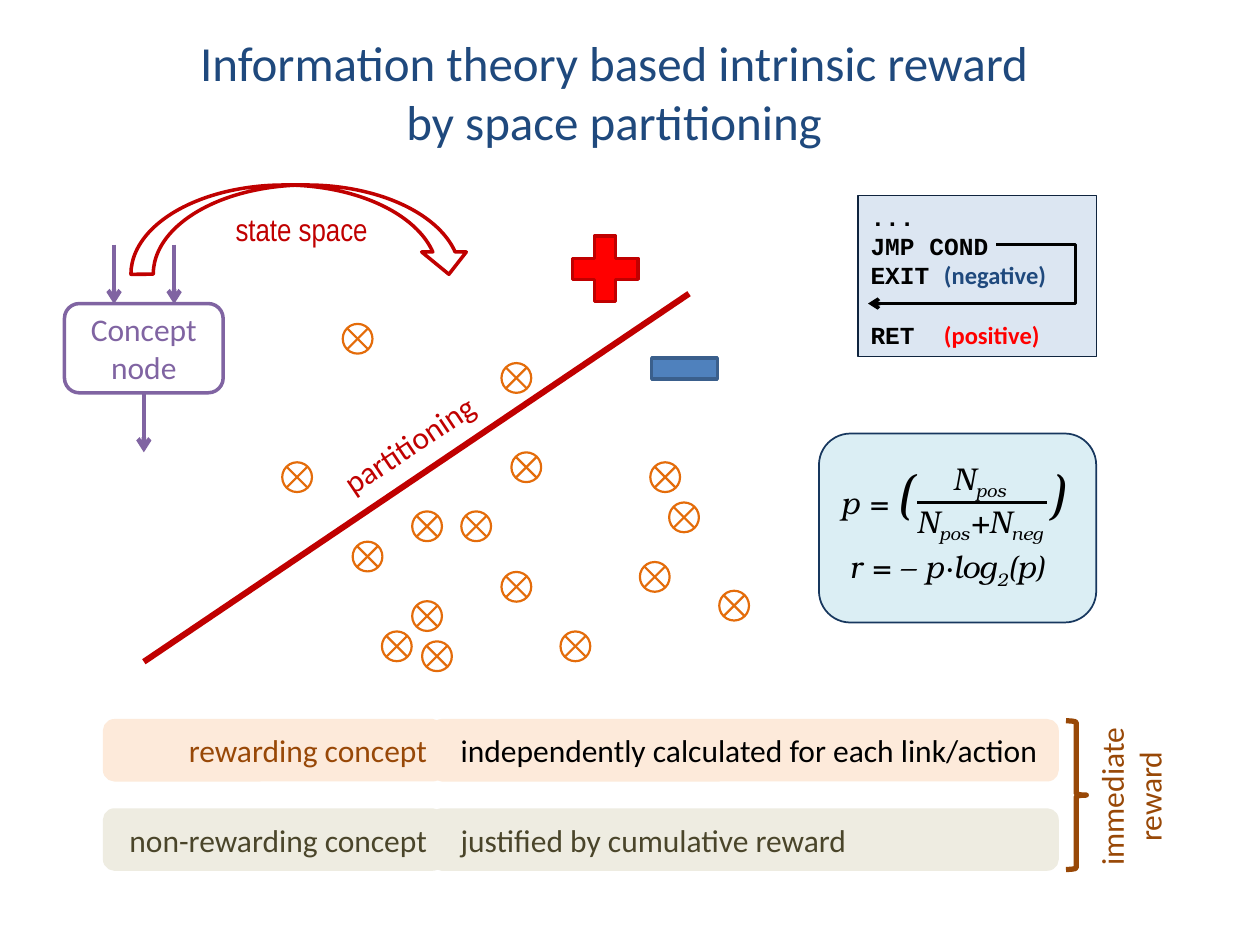
"""Slide on intrinsic reward from partitioning a state space."""
from dataclasses import dataclass

from lxml import etree
from pptx import Presentation
from pptx import util as u
from pptx.dml.color import RGBColor
from pptx.enum import shapes, text
from pptx.oxml import ns

G = shapes.MSO_SHAPE
AL = text.PP_ALIGN
AN = text.MSO_ANCHOR


@dataclass(frozen=True)
class Theme:
    navy: str = "1F497D"
    red: str = "C00000"
    bright: str = "FF0000"
    purple: str = "8064A2"
    orange: str = "E46C0A"
    brown: str = "984807"
    olive: str = "4A452A"
    peach: str = "FDEADA"
    sand: str = "EEECE1"
    black: str = "000000"
    white: str = "FFFFFF"
    title: int = 28
    body: int = 18
    code: int = 14
    paren: int = 32
    sans: str = "Calibri"
    narrow: str = "Arial Narrow"
    mono: str = "Courier New"
    math: str = "TeX Gyre Bonum"


def sub(parent, tag, **attrs):
    return etree.SubElement(parent, ns.qn(tag), attrs)


class Painter:
    def __init__(self, slide, theme):
        self.s, self.t = slide, theme

    def put_text(self, sp, paras, align=AL.LEFT, anchor=AN.TOP, wrap=True, inset=0.25,
                 color=None, size=None, font=None, before=(), tab=None, **style):
        tf = sp.text_frame
        frame = dict(word_wrap=wrap, vertical_anchor=anchor, margin_left=u.Cm(inset))
        for name, value in frame.items():
            setattr(tf, name, value)
        base = dict(color=color or self.t.black, size=size or self.t.body,
                    name=font or self.t.sans, **style)
        for i, runs in enumerate(paras):
            p = tf.paragraphs[0] if i == 0 else tf.add_paragraph()
            p.alignment = align
            if i in before:
                p.space_before = u.Pt(17)
            if tab:
                tabs = sub(p._p.get_or_add_pPr(), "a:tabLst")
                sub(tabs, "a:tab", pos=str(u.Cm(tab)), algn="l")
            for run in [runs] if isinstance(runs, str) else runs:
                words, extra = (run, {}) if isinstance(run, str) else run
                self.put_run(p, words, {**base, **extra})

    def put_run(self, p, words, fmt):
        r = p.add_run()
        r.text = words
        if fmt.pop("low", False):
            r._r.get_or_add_rPr().set("baseline", "-25000")
        r.font.color.rgb = RGBColor.from_string(fmt.pop("color"))
        fmt["size"] = u.Pt(fmt["size"])
        for name, value in fmt.items():
            setattr(r.font, name, value)

    def shape(self, kind, x, y, w, h, line, width, fill=None):
        sp = self.s.shapes.add_shape(kind, *map(u.Cm, (x, y, w, h)))
        sp.shadow.inherit = False
        if fill:
            sp.fill.solid()
            sp.fill.fore_color.rgb = RGBColor.from_string(fill)
        else:
            sp.fill.background()
        sp.line.color.rgb = RGBColor.from_string(line)
        sp.line.width = u.Pt(width)
        return sp

    def label(self, paras, x, y, w, h, rotation=0, **fmt):
        sp = self.s.shapes.add_textbox(*map(u.Cm, (x, y, w, h)))
        sp.rotation = rotation
        self.put_text(sp, paras, **fmt)

    def bar(self, words, x, y, w, fill, **fmt):
        sp = self.shape(G.ROUNDED_RECTANGLE, x, y, w, 1.19, fill, 2, fill)
        self.put_text(sp, [words], anchor=AN.MIDDLE, **fmt)

    def line(self, start, end, color, width, arrow=False, bend=None):
        kinds = shapes.MSO_CONNECTOR
        kind = kinds.STRAIGHT if bend is None else kinds.ELBOW
        c = self.s.shapes.add_connector(kind, *map(u.Cm, (*start, *end)))
        c.line.color.rgb = RGBColor.from_string(color)
        c.line.width = u.Pt(width)
        props = c._element.spPr
        if arrow:
            sub(props.find(ns.qn("a:ln")), "a:tailEnd", type="arrow")
        if bend is not None:
            guides = props.find(f"{ns.qn('a:prstGeom')}/{ns.qn('a:avLst')}")
            sub(guides, "a:gd", name="adj1", fmla=f"val {bend}")
        sub(props, "a:effectLst")


def draw_space(d, t):
    d.line((2.9, 13.34), (13.89, 5.92), t.red, 3.5)
    d.label(["partitioning"], 6.48, 8.43, 3.56, 1.02, rotation=326.2, color=t.red)
    d.shape(G.CURVED_DOWN_ARROW, 2.64, 3.73, 6.86, 1.8, t.red, 2)
    d.label(["state space"], 4.5, 4.11, 3.2, 1.02, wrap=False, color=t.red, font=t.narrow)
    states = [(5.69, 9.32), (10.11, 7.32), (8.31, 10.31), (10.31, 9.12),
              (8.51, 12.93), (7.7, 12.73), (13.11, 9.32), (10.11, 11.53),
              (14.5, 11.91), (12.9, 11.33), (11.3, 12.73), (7.11, 10.92),
              (9.3, 10.31), (8.31, 12.12), (6.91, 6.53), (13.49, 10.13)]
    for x, y in states:
        d.shape(G.FLOWCHART_SUMMING_JUNCTION, x, y, 0.6, 0.6, t.orange, 1.25, t.white)
    d.shape(G.MATH_PLUS, 11.3, 4.52, 1.8, 1.8, t.red, 2, t.bright)
    d.shape(G.MATH_MINUS, 12.9, 6.53, 1.8, 1.8, "3A5F8C", 2, "4F81BD")


def draw_node(d, t):
    for x, top in ((2.9, 7.92), (3.51, 4.93), (2.3, 4.93)):
        d.line((x, top), (x, top + 1.2), t.purple, 2.5, arrow=True)
    node = d.shape(G.ROUNDED_RECTANGLE, 1.3, 6.12, 3.2, 1.8, t.purple, 2, t.white)
    d.put_text(node, ["Concept node"], align=AL.CENTER, anchor=AN.MIDDLE, color=t.purple)


def draw_code(d, t):
    box = d.shape(G.RECTANGLE, 17.3, 3.94, 4.8, 3.25, "0F243E", 0.75, "DCE6F2")
    negative = ("(negative)", dict(name=t.sans, color=t.navy))
    positive = ("(positive)", dict(name=t.sans, color=t.bright))
    d.put_text(box, ["...", "JMP COND", ["EXIT\t", negative], ["RET\t", positive]],
               size=t.code, font=t.mono, bold=True, before=(3,), tab=1.48)
    d.line((20.09, 4.93), (17.5, 6.12), t.black, 2, arrow=True, bend=-61400)


def draw_formula(d, t):
    d.shape(G.ROUNDED_RECTANGLE, 16.51, 8.74, 5.59, 3.81, "17375E", 1, "DBEEF4")
    math = dict(font=t.math, italic=True)
    low = dict(low=True)
    big = dict(size=t.paren)
    d.label([["r = – p·log", ("2", low), "(p)"]], 16.87, 10.9, 4.5, 1.02, wrap=False, **math)
    d.line((18.49, 10.13), (21.11, 10.13), t.black, 2)
    d.label([["N", ("pos", low)], ["N", ("pos", low), "+N", ("neg", low)]],
            18.11, 9.12, 3.28, 1.8, wrap=False, align=AL.CENTER, **math)
    d.label([["p = ", ("(", big)]], 16.69, 9.12, 3, 1.63, **math)
    d.label([[(")", big)]], 20.9, 9.12, 1.2, 1.63, **math)


def draw_rewards(d, t):
    rows = [("rewarding concept", "independently calculated for each link/action",
             t.peach, t.brown, t.black),
            ("non-rewarding concept", "justified by cumulative reward",
             t.sand, t.olive, t.olive)]
    for i, (concept, reason, fill, left, right) in enumerate(rows):
        y = 14.53 + 1.8 * i
        d.bar(reason, 8.71, y, 12.6, fill, inset=0.52, color=right)
        d.bar(concept, 2.11, y, 6.81, fill, align=AL.RIGHT, color=left)
    d.shape(G.RIGHT_BRACE, 21.49, 14.53, 0.41, 3, t.brown, 3)
    d.label(["immediate", "reward"], 21.13, 15.16, 3.33, 1.8, rotation=270,
            wrap=False, align=AL.CENTER, color=t.brown)


def main():
    prs = Presentation()
    prs.slide_width, prs.slide_height = u.Cm(25.4), u.Cm(19.05)
    t = Theme()
    d = Painter(prs.slides.add_slide(prs.slide_layouts[6]), t)
    d.label(["Information theory based intrinsic reward", "by space partitioning"],
            3.68, 0.53, 17.4, 2.64, wrap=False, align=AL.CENTER, color=t.navy, size=t.title)
    for draw in (draw_space, draw_node, draw_code, draw_formula, draw_rewards):
        draw(d, t)
    prs.save("out.pptx")


if __name__ == "__main__":
    main()
